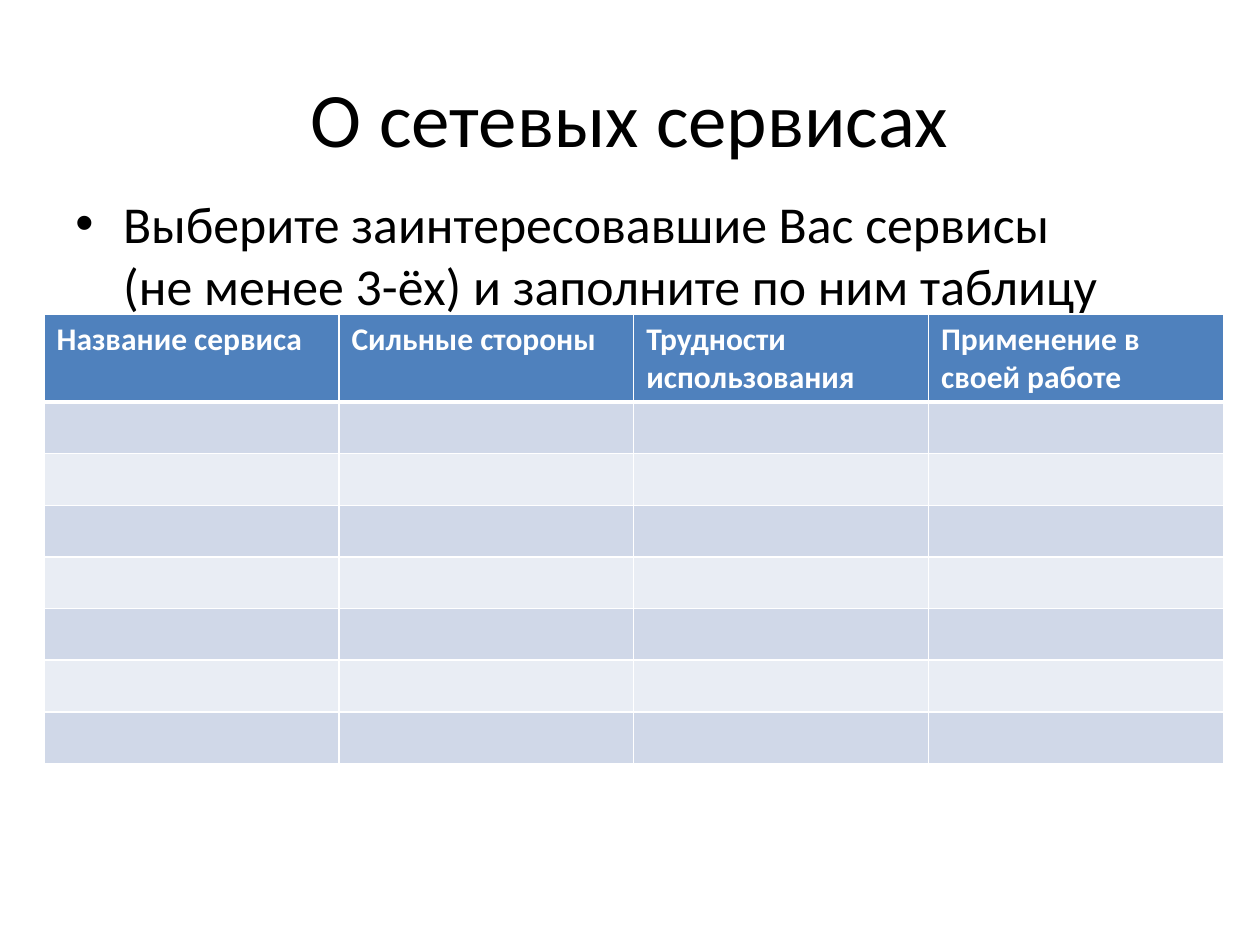
from lxml.etree import SubElement
from pptx import Presentation
from pptx.dml.color import RGBColor
from pptx.enum.text import MSO_ANCHOR, PP_ALIGN
from pptx.oxml.ns import qn
from pptx.util import Inches, Pt

COLORS = {
    "text": "000000",
    "white": "FFFFFF",
    "header": "4F81BD",
    "odd_row": "D0D8E8",
    "even_row": "E9EDF4",
}
HEADINGS = [
    "Название сервиса",
    "Сильные стороны",
    "Трудности использования",
    "Применение в своей работе",
]
EMPTY_ROWS = 7


class SlideBuilder:
    font_name = "Calibri"

    def __init__(self, slide):
        self.slide = slide

    def color(self, name):
        return RGBColor.from_string(COLORS[name])

    def run(self, paragraph, text, size, color="text", bold=False):
        run = paragraph.add_run()
        run.text = text
        run.font.name = self.font_name
        run.font.size = Pt(size)
        run.font.bold = bold
        run.font.color.rgb = self.color(color)

    def text_frame(self, left, top, width, height):
        box = self.slide.shapes.add_textbox(
            Inches(left), Inches(top), Inches(width), Inches(height))
        box.text_frame.word_wrap = True
        return box.text_frame

    def title(self, text, *place):
        frame = self.text_frame(*place)
        frame.vertical_anchor = MSO_ANCHOR.MIDDLE
        heading = frame.paragraphs[0]
        heading.alignment = PP_ALIGN.CENTER
        self.run(heading, text, 44)

    def bullet(self, lines, *place):
        task = self.text_frame(*place).paragraphs[0]
        properties = task._p.get_or_add_pPr()
        indent = Inches(0.38)
        properties.set("marL", str(indent))
        properties.set("indent", str(-indent))
        SubElement(properties, qn("a:buFont"), typeface="Arial")
        SubElement(properties, qn("a:buChar"), char="•")
        for index, line in enumerate(lines):
            if index:
                task.add_line_break()
            self.run(task, line, 29.6)

    def borders(self, cell, top, bottom):
        """Draw white cell edges; top and bottom are widths in points."""
        properties = cell._tc.get_or_add_tcPr()
        for edge, width in (("lnL", 1), ("lnR", 1), ("lnT", top), ("lnB", bottom)):
            line = SubElement(properties, qn(f"a:{edge}"), w=str(Pt(width)))
            fill = SubElement(line, qn("a:solidFill"))
            SubElement(fill, qn("a:srgbClr"), val=COLORS["white"])

    def table(self, headings, empty_rows, left, top, column_width,
              header_height, row_height):
        columns = len(headings)
        table = self.slide.shapes.add_table(
            empty_rows + 1, columns, Inches(left), Inches(top),
            Inches(column_width * columns),
            Inches(header_height + row_height * empty_rows)).table
        for column in table.columns:
            column.width = Inches(column_width)
        for index, row in enumerate(table.rows):
            row.height = Inches(row_height if index else header_height)
            band = "odd_row" if index % 2 else "even_row"
            for cell in row.cells:
                self.borders(cell, top=3 if index == 1 else 1,
                             bottom=1 if index else 3)
                cell.fill.solid()
                cell.fill.fore_color.rgb = self.color(band if index else "header")
        for cell, heading in zip(table.rows[0].cells, headings):
            self.run(cell.text_frame.paragraphs[0], heading, 18, "white", bold=True)


def main():
    presentation = Presentation()
    presentation.slide_width = Inches(10)
    presentation.slide_height = Inches(7.5)
    builder = SlideBuilder(
        presentation.slides.add_slide(presentation.slide_layouts[6]))

    builder.title("О сетевых сервисах", 0.5, 0.3, 9, 1.25)
    builder.bullet(["Выберите заинтересовавшие Вас сервисы",
                    "(не менее 3-ёх) и заполните по ним таблицу"],
                   0.5, 1.47, 9, 0.94)
    builder.table(HEADINGS, EMPTY_ROWS, left=0.35, top=2.49, column_width=2.34,
                  header_height=0.7, row_height=0.41)
    presentation.save("out.pptx")


if __name__ == "__main__":
    main()
